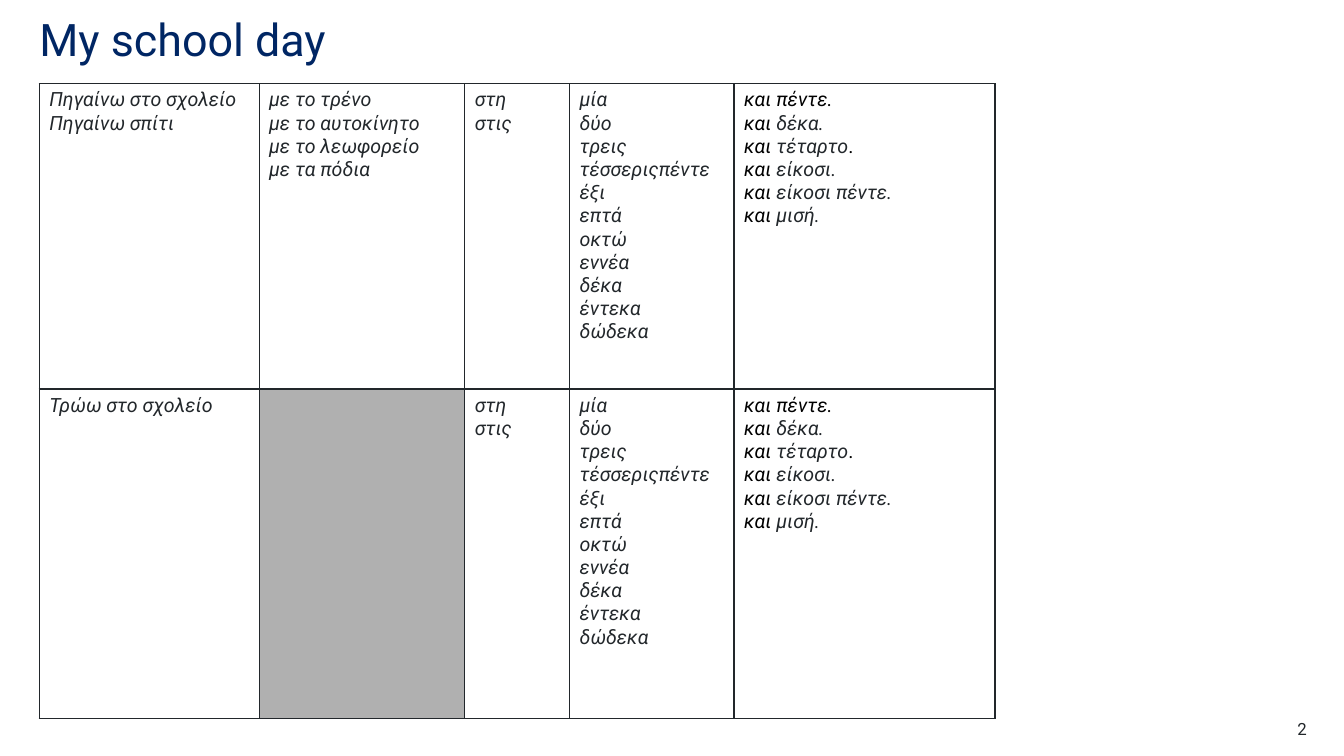
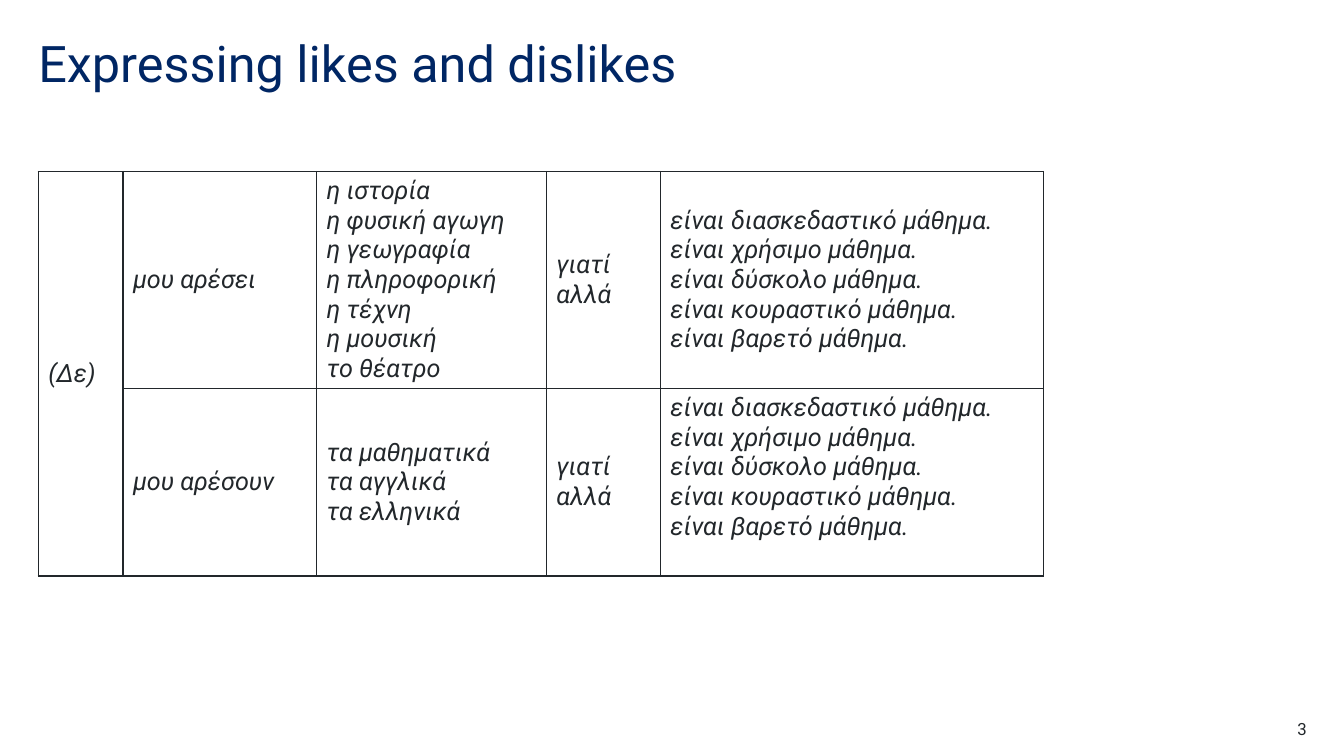
from dataclasses import dataclass
from typing import Optional, Union

import pptx
import pptx.dml.color
import pptx.enum.text
import pptx.oxml
import pptx.oxml.ns
import pptx.util
from pptx.util import Inches

FONT = "Roboto"
NAVY = "002664"
INK = "22272B"
BLACK = "000000"
GREY = "B0B0B0"
WHITE = "FFFFFF"
TOP = pptx.enum.text.MSO_ANCHOR.TOP
MIDDLE = pptx.enum.text.MSO_ANCHOR.MIDDLE
LEFT = pptx.enum.text.PP_ALIGN.LEFT
RIGHT = pptx.enum.text.PP_ALIGN.RIGHT


@dataclass(frozen=True)
class Run:
    text: str
    color: str = INK
    italic: bool = True


Line = Union[str, tuple[Run, ...]]


@dataclass(frozen=True)
class Cell:
    lines: tuple[Line, ...] = ()
    fill: str = WHITE
    anchor: pptx.enum.text.MSO_ANCHOR = TOP


@dataclass(frozen=True)
class Grid:
    left: float
    top: float
    columns: tuple[float, ...]
    rows: tuple[float, ...]
    size: int
    cells: tuple[tuple[Optional[Cell], ...], ...]


@dataclass(frozen=True)
class Page:
    number: int
    title: str
    title_top: float
    title_size: int
    grid: Grid


def rgb(color: str) -> pptx.dml.color.RGBColor:
    return pptx.dml.color.RGBColor.from_string(color)


def write_text(text_frame, lines: tuple[Line, ...], *, size: int, color: str = INK,
               italic: bool = False, align=LEFT, spacing: float = 1.0) -> None:
    for index, line in enumerate(lines):
        paragraph = text_frame.add_paragraph() if index else text_frame.paragraphs[0]
        paragraph.alignment = align
        paragraph.line_spacing = spacing
        runs = (Run(line, color, italic),) if isinstance(line, str) else line
        for item in runs:
            run = paragraph.add_run()
            run.text = item.text
            run.font.name = FONT
            run.font.size = pptx.util.Pt(size)
            run.font.italic = item.italic
            run.font.color.rgb = rgb(item.color)


def clear_frame(text_frame) -> None:
    text_frame.margin_left = text_frame.margin_right = 0
    text_frame.margin_top = text_frame.margin_bottom = 0
    text_frame.word_wrap = True
    text_frame.auto_size = pptx.enum.text.MSO_AUTO_SIZE.NONE
    text_frame.vertical_anchor = TOP


def add_borders(cell, color: str = INK, width: float = 1) -> None:
    properties = cell._tc.get_or_add_tcPr()
    for index, side in enumerate(("lnL", "lnR", "lnT", "lnB")):
        border = pptx.oxml.parse_xml(
            f'<a:{side} {pptx.oxml.ns.nsdecls("a")} w="{pptx.util.Pt(width)}">'
            f'<a:solidFill><a:srgbClr val="{color}"/></a:solidFill></a:{side}>'
        )
        properties.insert(index, border)


def add_title(slide, page: Page) -> None:
    title = slide.shapes.title
    title.left, title.top = Inches(page.grid.left), Inches(page.title_top)
    title.width, title.height = Inches(11.02), Inches(1.1)
    clear_frame(title.text_frame)
    write_text(title.text_frame, (page.title,), size=page.title_size, color=NAVY, spacing=0.9)


def add_grid(slide, grid: Grid) -> None:
    table = slide.shapes.add_table(
        len(grid.rows), len(grid.columns), Inches(grid.left), Inches(grid.top),
        Inches(sum(grid.columns)), Inches(sum(grid.rows)),
    ).table
    table.first_row = table.horz_banding = False
    for column, width in zip(table.columns, grid.columns):
        column.width = Inches(width)
    for row, height in zip(table.rows, grid.rows):
        row.height = Inches(height)
    for row_index, row_cells in enumerate(grid.cells):
        for column_index, content in enumerate(row_cells):
            cell = table.cell(row_index, column_index)
            content_or_blank = content or Cell()
            cell.fill.solid()
            cell.fill.fore_color.rgb = rgb(content_or_blank.fill)
            cell.vertical_anchor = content_or_blank.anchor
            write_text(cell.text_frame, content_or_blank.lines, size=grid.size, italic=True)
            add_borders(cell)
            if content is None:
                table.cell(row_index - 1, column_index).merge(cell)


def add_page_number(slide, number: int) -> None:
    box = slide.shapes.add_textbox(Inches(12.17), Inches(7.13), Inches(0.79), Inches(0.2))
    clear_frame(box.text_frame)
    write_text(box.text_frame, (str(number),), size=12, align=RIGHT)


def add_page(presentation, page: Page) -> None:
    slide = presentation.slides.add_slide(presentation.slide_layouts[5])
    add_title(slide, page)
    add_grid(slide, page.grid)
    add_page_number(slide, page.number)


def minutes(text: str) -> tuple[Run, ...]:
    return Run("και ", BLACK), Run(text)


def middle(*lines: str) -> Cell:
    return Cell(lines, anchor=MIDDLE)


AT_TIME = (
    Cell(("στη", "στις")),
    Cell(("μία", "δύο", "τρεις", "τέσσεριςπέντε", "έξι", "επτά", "οκτώ", "εννέα",
          "δέκα", "έντεκα", "δώδεκα")),
    Cell((
        (Run("και πέντε.", BLACK),),
        minutes("δέκα."),
        minutes("τέταρτο") + (Run(".", BLACK, False),),
        minutes("είκοσι."),
        minutes("είκοσι πέντε."),
        minutes("μισή."),
    )),
)
TRANSPORT = Cell(("με το τρένο", "με το αυτοκίνητο", "με το λεωφορείο", "με τα πόδια"))
CONJUNCTIONS = middle("γιατί", "αλλά")
REASONS = tuple(f"είναι {quality} μάθημα." for quality in
                ("διασκεδαστικό", "χρήσιμο", "δύσκολο", "κουραστικό", "βαρετό"))

PAGES = (
    Page(2, "My school day", 0.18, 32, Grid(
        0.39, 0.83, (2.18, 2.04, 1.04, 1.63, 2.59), (3.03, 3.27), 14,
        (
            (Cell(("Πηγαίνω στο σχολείο", "Πηγαίνω σπίτι")), TRANSPORT, *AT_TIME),
            (Cell(("Τρώω στο σχολείο",)), Cell(fill=GREY), *AT_TIME),
        ),
    )),
    Page(3, "Expressing likes and dislikes", 0.39, 36, Grid(
        0.38, 1.7, (0.84, 1.92, 2.28, 1.13, 3.8), (2.15, 1.86), 18,
        (
            (
                middle("(Δε)"),
                middle("μου αρέσει"),
                middle("η ιστορία", "η φυσική αγωγη", "η γεωγραφία", "η πληροφορική",
                       "η τέχνη", "η μουσική", "το θέατρο"),
                CONJUNCTIONS,
                middle(*REASONS),
            ),
            (
                None,
                middle("μου αρέσουν"),
                middle("τα μαθηματικά", "τα αγγλικά", "τα ελληνικά"),
                CONJUNCTIONS,
                Cell(REASONS),
            ),
        ),
    )),
)


def main() -> None:
    presentation = pptx.Presentation()
    presentation.slide_width = Inches(13.33)
    presentation.slide_height = Inches(7.5)
    for page in PAGES:
        add_page(presentation, page)
    presentation.save("out.pptx")


if __name__ == "__main__":
    main()
